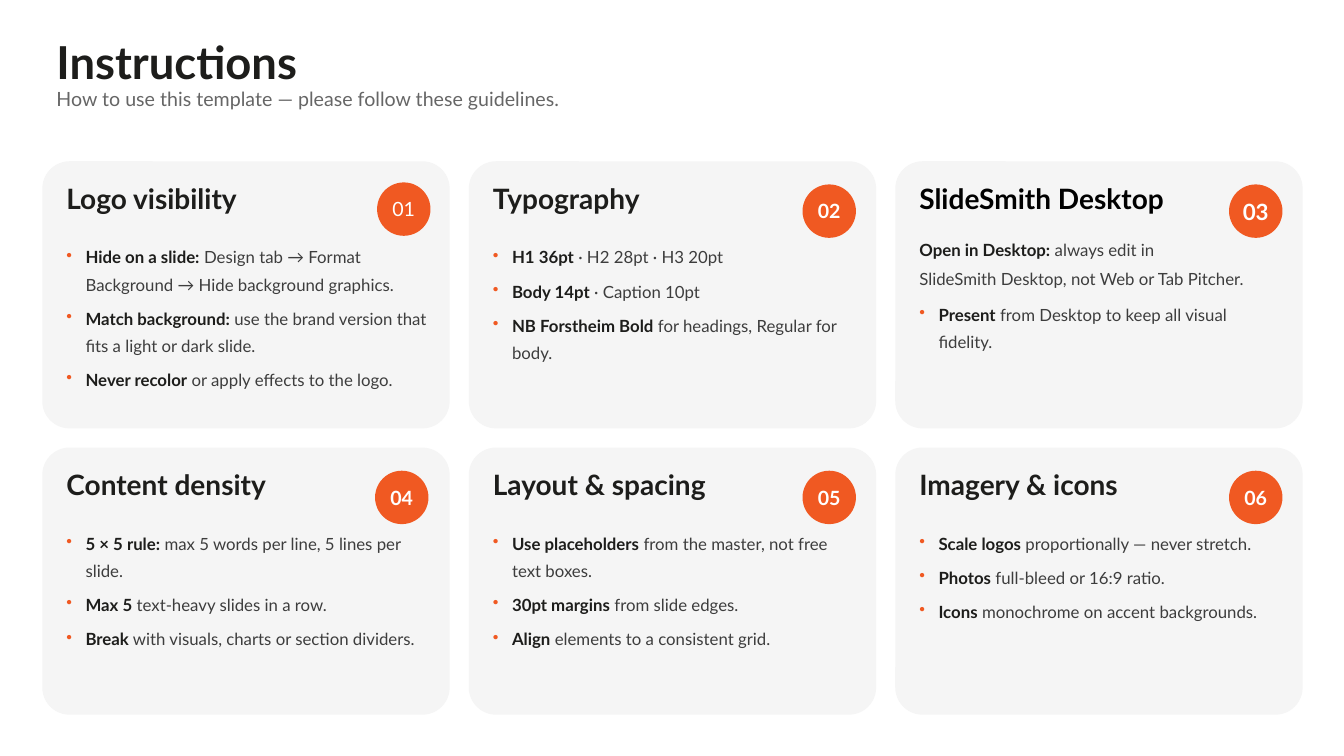
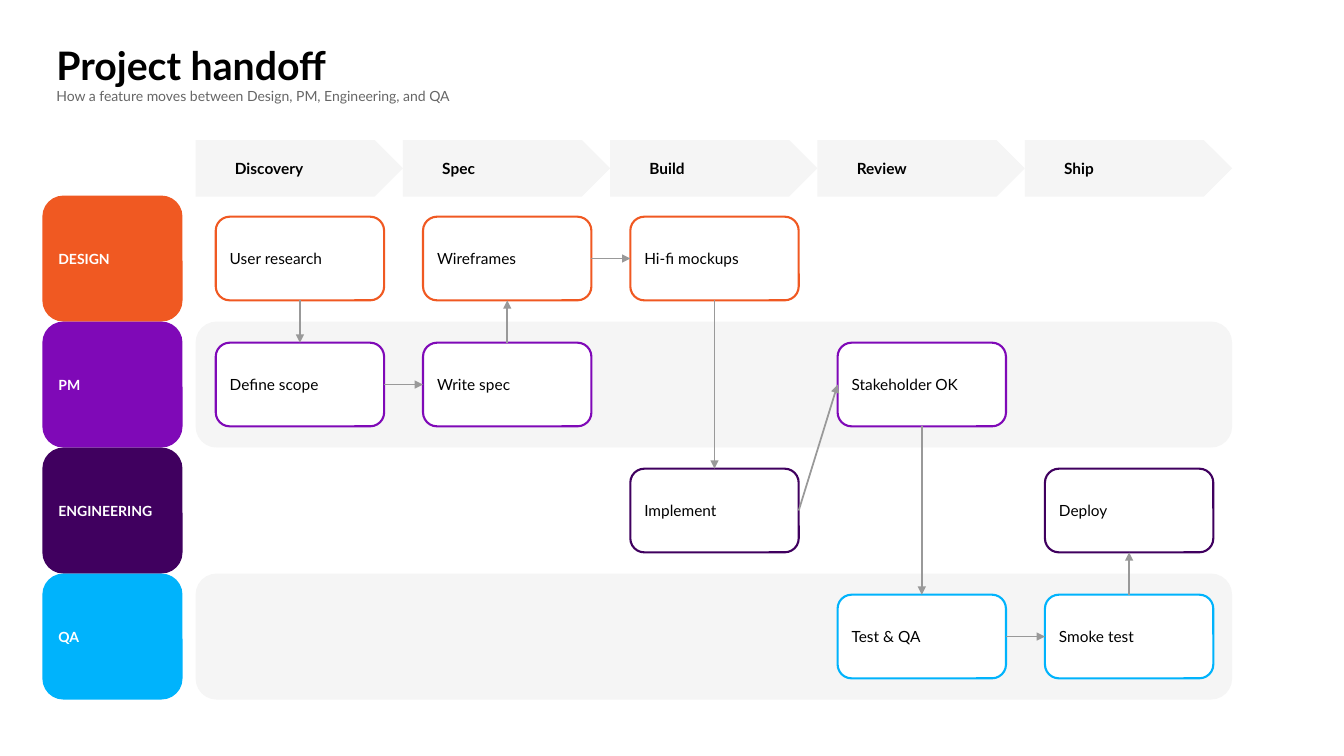
from lxml import etree
from pptx import Presentation
from pptx.dml.color import RGBColor
from pptx.enum import shapes, text
from pptx.oxml import ns
from pptx.util import Inches, Pt

FONT = "Lato"
INK = RGBColor(0x1D, 0x1D, 0x1B)
BLACK = RGBColor(0, 0, 0)
WHITE = RGBColor(255, 255, 255)
BODY = RGBColor(0x3D, 0x3D, 0x3D)
MUTED = RGBColor(0x66, 0x66, 0x66)
ARROW = RGBColor(0x99, 0x99, 0x99)
PANEL = RGBColor(0xF5, 0xF5, 0xF5)
ORANGE = RGBColor(0xF0, 0x59, 0x22)
PURPLE = RGBColor(0x7F, 0x09, 0xB7)
PLUM = RGBColor(0x40, 0x00, 0x5F)
BLUE = RGBColor(0x00, 0xB3, 0xFC)

SHAPE = shapes.MSO_SHAPE
ANCHOR = text.MSO_ANCHOR
ALIGN = text.PP_ALIGN
LEFT = 0.42

CARDS = [
    dict(heading="Logo visibility", badge=dict(dx=3.32, dy=0.21, bold=False), items=[
        ("Hide on a slide:", " Design tab → Format Background → Hide background graphics."),
        ("Match background:", " use the brand version that fits a light or dark slide."),
        ("Never recolor", " or apply effects to the logo.")]),
    dict(heading="Typography", items=[
        ("H1 36pt", " · H2 28pt · H3 20pt"),
        ("Body 14pt", " · Caption 10pt"),
        ("NB Forstheim Bold", " for headings, Regular for body.")]),
    dict(heading="SlideSmith Desktop", color=BLACK, badge=dict(size=16), intro=[
        ("Open in Desktop:", " always edit in"),
        ("", "SlideSmith Desktop, not Web or Tab Pitcher.")], items=[
        ("Present", " from Desktop to keep all visual fidelity.")]),
    dict(heading="Content density", badge=dict(dx=3.3), items=[
        ("5 × 5 rule:", " max 5 words per line, 5 lines per slide."),
        ("Max 5", " text-heavy slides in a row."),
        ("Break", " with visuals, charts or section dividers.")]),
    dict(heading="Layout & spacing", items=[
        ("Use placeholders", " from the master, not free text boxes."),
        ("30pt margins", " from slide edges."),
        ("Align", " elements to a consistent grid.")]),
    dict(heading="Imagery & icons", items=[
        ("Scale logos", " proportionally — never stretch."),
        ("Photos", " full-bleed or 16:9 ratio."),
        ("Icons", " monochrome on accent backgrounds.")]),
]

STAGES = ["Discovery", "Spec", "Build", "Review", "Ship"]
LANES = [("DESIGN", ORANGE), ("PM", PURPLE), ("ENGINEERING", PLUM), ("QA", BLUE)]
STEPS = {
    "User research": (0, 0),
    "Define scope": (0, 1),
    "Wireframes": (1, 0),
    "Write spec": (1, 1),
    "Hi-fi mockups": (2, 0),
    "Implement": (2, 2),
    "Stakeholder OK": (3, 1),
    "Test & QA": (3, 3),
    "Deploy": (4, 2),
    "Smoke test": (4, 3),
}
FLOW = ["User research", "Define scope", "Write spec", "Wireframes", "Hi-fi mockups",
        "Implement", "Stakeholder OK", "Test & QA", "Smoke test", "Deploy"]


def add_run(p, words, size, color, bold=False):
    r = p.add_run()
    r.text = words
    for key, value in dict(name=FONT, size=Pt(size), bold=bold).items():
        setattr(r.font, key, value)
    r.font.color.rgb = color


def set_frame(tf, insets=None, anchor=ANCHOR.TOP, wrap=True):
    tf.word_wrap = wrap
    tf.vertical_anchor = anchor
    if insets:
        for side, inset in zip(("left", "top", "right", "bottom"), insets):
            setattr(tf, f"margin_{side}", Inches(inset))


def add_box(s, kind, box, fill, line=None):
    sp = s.shapes.add_shape(kind, *map(Inches, box))
    sp.shadow.inherit = False
    sp.fill.solid()
    sp.fill.fore_color.rgb = fill
    if line is None:
        sp.line.fill.background()
    else:
        sp.line.color.rgb = line
        sp.line.width = Pt(1.5)
    return sp


def add_label(sp, words, size, color, bold=True, align=ALIGN.LEFT, insets=None, wrap=True):
    set_frame(sp.text_frame, insets, ANCHOR.MIDDLE, wrap)
    p = sp.text_frame.paragraphs[0]
    p.alignment = align
    add_run(p, words, size, color, bold)


def add_header(prs, title, subtitle, title_size, title_color, subtitle_size, spacing=1.0):
    s = prs.slides.add_slide(prs.slide_layouts[5])
    head = s.shapes.title
    for key, value in zip(("left", "top", "width", "height"), (0.56, 0.4, 8.53, 0.49)):
        setattr(head, key, Inches(value))
    add_label(head, title, title_size, title_color, insets=(0,) * 4)
    head.text_frame.paragraphs[0].line_spacing = spacing
    sub = s.shapes.add_textbox(*map(Inches, (0.56, 0.89, 8.53, 0.42)))
    set_frame(sub.text_frame, (0,) * 4)
    p = sub.text_frame.paragraphs[0]
    p.line_spacing = 0.9
    add_run(p, subtitle, subtitle_size, MUTED)
    return s


def add_bullet(p):
    pPr = p._p.get_or_add_pPr()
    pPr.set("marL", str(Inches(0.19)))
    pPr.set("indent", str(-Inches(0.19)))
    color = etree.SubElement(pPr, ns.qn("a:buClr"))
    etree.SubElement(color, ns.qn("a:srgbClr"), val=str(ORANGE))
    etree.SubElement(pPr, ns.qn("a:buChar"), char="•")
    p.line_spacing = 1.35


def add_item(tf, item, after, bulleted):
    p = tf.add_paragraph()
    p.alignment = ALIGN.LEFT
    if bulleted:
        add_bullet(p)
    p.space_after = Pt(after)
    lead, rest = item
    if lead:
        add_run(p, lead, 12, INK, True)
    add_run(p, rest, 12, BODY)


def add_badge(s, x, y, number, dx=3.31, dy=0.23, size=14, bold=True):
    sp = add_box(s, SHAPE.OVAL, (x + dx, y + dy, 0.53, 0.53), ORANGE)
    add_label(sp, f"{number:02d}", size, WHITE, bold, ALIGN.CENTER, (0,) * 4, False)


def add_card(s, x, y, number, heading, items, intro=(), color=INK, badge=None):
    sp = add_box(s, SHAPE.ROUNDED_RECTANGLE, (x, y, 4.04, 2.65), PANEL)
    sp.adjustments[0] = 0.102
    tf = sp.text_frame
    set_frame(tf, (0.16, 0.12, 0.12, 0.05))
    p = tf.paragraphs[0]
    p.alignment = ALIGN.LEFT
    p.space_after = Pt(18)
    add_run(p, heading, 20, color, True)
    for item in intro:
        add_item(tf, item, 6, False)
    for item in items:
        add_item(tf, item, 5, True)
    add_badge(s, x, y, number, **(badge or {}))


def add_instructions(prs):
    s = add_header(prs, "Instructions",
                   "How to use this template — please follow these guidelines.",
                   32.4, INK, 14, 0.9)
    for i, card in enumerate(CARDS):
        row, col = divmod(i, 3)
        add_card(s, LEFT + col * 4.23, 1.6 + row * 2.84, i + 1, **card)


def add_arrow(s, start, end, start_side, end_side):
    c = s.shapes.add_connector(shapes.MSO_CONNECTOR.STRAIGHT, 0, 0, 0, 0)
    c.begin_connect(start, start_side)
    c.end_connect(end, end_side)
    c.line.color.rgb = ARROW
    c.line.width = Pt(1.25)
    etree.SubElement(c.line._get_or_add_ln(), ns.qn("a:tailEnd"), type="triangle")
    etree.SubElement(c._element.spPr, ns.qn("a:effectLst"))


def add_swimlanes(s, x, y, width, lane_height):
    stage_width = width / len(STAGES)
    for i, (lane, color) in enumerate(LANES):
        top = y + i * lane_height
        add_box(s, SHAPE.ROUNDED_RECTANGLE, (x, top, width, lane_height),
                PANEL if i % 2 else WHITE)
        tab = add_box(s, SHAPE.ROUNDED_RECTANGLE, (LEFT, top, 1.39, lane_height), color)
        add_label(tab, lane, 10, WHITE)
    for i, stage in enumerate(STAGES):
        sp = add_box(s, SHAPE.PENTAGON,
                     (x + i * stage_width, y - 0.55, stage_width, 0.56), PANEL)
        add_label(sp, stage, 11, BLACK, insets=(0.39, 0.05, 0.1, 0.05))
    boxes = {}
    for step, (stage, lane) in STEPS.items():
        box = (x + 0.2 + stage * stage_width, y + 0.21 + lane * lane_height, 1.67, 0.83)
        boxes[step] = add_box(s, SHAPE.ROUNDED_RECTANGLE, box, WHITE, LANES[lane][1])
        add_label(boxes[step], step, 11, BLACK, False)
    for start, end in zip(FLOW, FLOW[1:]):
        (stage_a, lane_a), (stage_b, lane_b) = STEPS[start], STEPS[end]
        if stage_a != stage_b:
            sides = (3, 1)
        else:
            sides = (2, 0) if lane_b > lane_a else (0, 2)
        add_arrow(s, boxes[start], boxes[end], *sides)


def add_handoff(prs):
    s = add_header(prs, "Project handoff",
                   "How a feature moves between Design, PM, Engineering, and QA",
                   28, BLACK, 10)
    add_swimlanes(s, 1.94, 1.94, 10.28, 1.25)


def main():
    prs = Presentation()
    prs.slide_width, prs.slide_height = Inches(13.33), Inches(7.5)
    add_instructions(prs)
    add_handoff(prs)
    prs.save("out.pptx")


if __name__ == "__main__":
    main()
